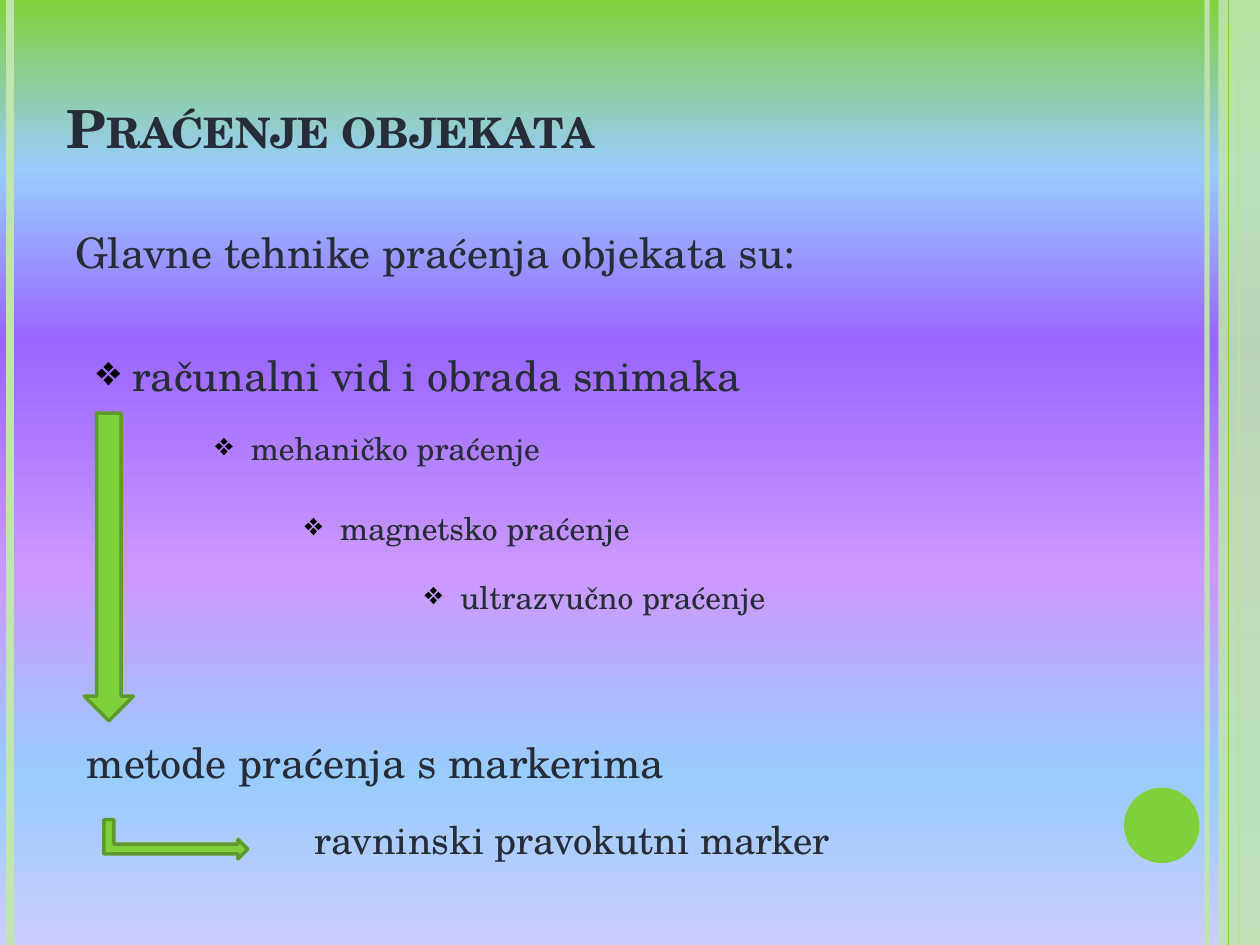
from dataclasses import dataclass

from lxml import etree
from pptx import Presentation
from pptx.dml.color import RGBColor
from pptx.enum.shapes import MSO_CONNECTOR, MSO_SHAPE
from pptx.enum.text import MSO_ANCHOR, PP_ALIGN
from pptx.oxml.ns import qn
from pptx.util import Cm, Pt

LINE = MSO_CONNECTOR.STRAIGHT
RECTANGLE, OVAL = MSO_SHAPE.RECTANGLE, MSO_SHAPE.OVAL
DOWN_ARROW, BENT_ARROW = MSO_SHAPE.DOWN_ARROW, MSO_SHAPE.BENT_UP_ARROW
TOP, BOTTOM = MSO_ANCHOR.TOP, MSO_ANCHOR.BOTTOM
LEFT = PP_ALIGN.LEFT
TITLE_ONLY = 5


@dataclass(frozen=True)
class Theme:
    font: str = "TeX Gyre Schola"
    ink: str = "272D38"
    bullet: str = "000000"
    green: str = "7FD13B"
    dark_green: str = "5E9B2C"
    pale_green: str = "C0E5AF"
    sky: tuple = ((0, "7FD13B"), (18, "99CCFF"), (36, "9966FF"),
                  (61, "CC99FF"), (82, "99CCFF"), (100, "CCCCFF"))
    title_size: int = 30
    lead_size: int = 24
    marker_size: int = 22
    item_size: int = 18


THEME = Theme()


def add_node(parent, tag, **attributes):
    node = etree.SubElement(parent, qn(tag))
    for key, value in attributes.items():
        node.set(key, str(value))
    return node


def set_opacity(element, percent):
    add_node(next(element.iter(qn("a:srgbClr"))), "a:alpha", val=percent * 1000)


def add_bullet(paragraph):
    hang = Cm(0.72)
    properties = paragraph._p.get_or_add_pPr()
    properties.set("marL", str(hang))
    properties.set("indent", str(-hang))
    color = add_node(properties, "a:buClr")
    add_node(color, "a:srgbClr", val=THEME.bullet)
    add_node(properties, "a:buSzPts", val=THEME.item_size * 100)
    add_node(properties, "a:buChar", char="❖")


def write_text(shape, text, size=THEME.lead_size, bold=False, small_caps=False,
               bulleted=False, anchor=TOP):
    frame = shape.text_frame
    frame.word_wrap = True
    frame.vertical_anchor = anchor
    paragraph = frame.paragraphs[0]
    paragraph.alignment = LEFT
    run = paragraph.add_run()
    run.text = text
    run.font.name = THEME.font
    run.font.size = Pt(size)
    run.font.bold = bold
    run.font.color.rgb = RGBColor.from_string(THEME.ink)
    if small_caps:
        run._r.get_or_add_rPr().set("cap", "small")
    if bulleted:
        add_bullet(paragraph)


def add_text(slide, left, top, width, height, text, **text_format):
    box = slide.shapes.add_textbox(Cm(left), Cm(top), Cm(width), Cm(height))
    write_text(box, text, **text_format)


def add_figure(slide, kind, left, top, width, height, fill, outline=None):
    figure = slide.shapes.add_shape(kind, Cm(left), Cm(top), Cm(width), Cm(height))
    figure.shadow.inherit = False
    figure.fill.solid()
    figure.fill.fore_color.rgb = RGBColor.from_string(fill)
    if outline:
        figure.line.color.rgb = RGBColor.from_string(outline)
        figure.line.width = Pt(2)
    else:
        figure.line.fill.background()
    return figure


def add_rail(slide, x, top, height, color, weight):
    rail = slide.shapes.add_connector(LINE, Cm(x), Cm(top), Cm(x), Cm(top + height))
    rail.line.color.rgb = RGBColor.from_string(color)
    rail.line.width = Pt(weight)
    add_node(rail._element.spPr, "a:effectLst")
    return rail


def paint_background(slide):
    fill = slide.background.fill
    fill.gradient()
    fill.gradient_angle = 270
    stops = next(slide.element.iter(qn("a:gsLst")))
    for stop in list(stops):
        stops.remove(stop)
    for percent, color in THEME.sky:
        stop = add_node(stops, "a:gs", pos=percent * 1000)
        add_node(stop, "a:srgbClr", val=color)


def add_frame(slide, left, top, width, height):
    inner = add_rail(slide, left + 24.33, top, height, THEME.pale_green, 3)
    set_opacity(inner._element.spPr, 93)
    add_rail(slide, left + 0.2, top, height, THEME.pale_green, 4.5)
    add_rail(slide, left + 24.97, top, height, THEME.green, 1.5)
    band_width = 0.84
    band = add_figure(slide, RECTANGLE, left + width - band_width, top,
                      band_width, height, THEME.pale_green)
    set_opacity(band._element.spPr, 87)
    add_rail(slide, left + 24.77, top, height, THEME.green, 0.75)
    add_figure(slide, OVAL, left + 22.66, top + 15.88, 1.52, 1.52, THEME.green)


def place_title(slide, left, top, width, height):
    title = slide.shapes.title
    title.left, title.top = Cm(left), Cm(top)
    title.width, title.height = Cm(width), Cm(height)
    write_text(title, "Praćenje objekata", size=THEME.title_size, bold=True,
               small_caps=True, anchor=BOTTOM)


def add_techniques(slide, left, top, width, height):
    add_text(slide, left, top, width, 1.68, "Glavne tehnike praćenja objekata su:")
    techniques = (
        (0.43, 2.48, "računalni vid i obrada snimaka", THEME.lead_size),
        (2.82, 4.08, "mehaničko praćenje", THEME.item_size),
        (4.62, 5.68, "magnetsko praćenje", THEME.item_size),
        (7.04, 7.08, "ultrazvučno praćenje", THEME.item_size),
    )
    for indent, drop, technique, size in techniques:
        add_text(slide, left + indent, top + drop, 15.2, 1.02, technique,
                 size=size, bulleted=True)
    arrow_top = 3.88
    add_figure(slide, DOWN_ARROW, left + 0.43, top + arrow_top, 0.99,
               height - arrow_top, THEME.green, THEME.dark_green)


def add_methods(slide, left, top, width, height):
    add_text(slide, left, top, width, 1.27, "metode praćenja s markerima")
    arrow = add_figure(slide, BENT_ARROW, left + 1.65, top + 0.74, 0.79, 2.9,
                       THEME.green, THEME.dark_green)
    arrow.rotation = 90
    marker_indent, marker_height = 4.6, 1.19
    add_text(slide, left + marker_indent, top + height - marker_height,
             width - marker_indent, marker_height, "ravninski pravokutni marker",
             size=THEME.marker_size)


def main():
    deck = Presentation()
    deck.slide_width, deck.slide_height = Cm(25.4), Cm(19.05)
    slide = deck.slides.add_slide(deck.slide_layouts[TITLE_ONLY])
    paint_background(slide)
    add_frame(slide, 0, 0, 25.4, 19.05)
    place_title(slide, 1.09, 1.32, 20.75, 2.01)
    add_techniques(slide, 1.27, 4.45, 20.75, 10.08)
    add_methods(slide, 1.5, 14.73, 18.39, 2.79)
    deck.save("out.pptx")


if __name__ == "__main__":
    main()
